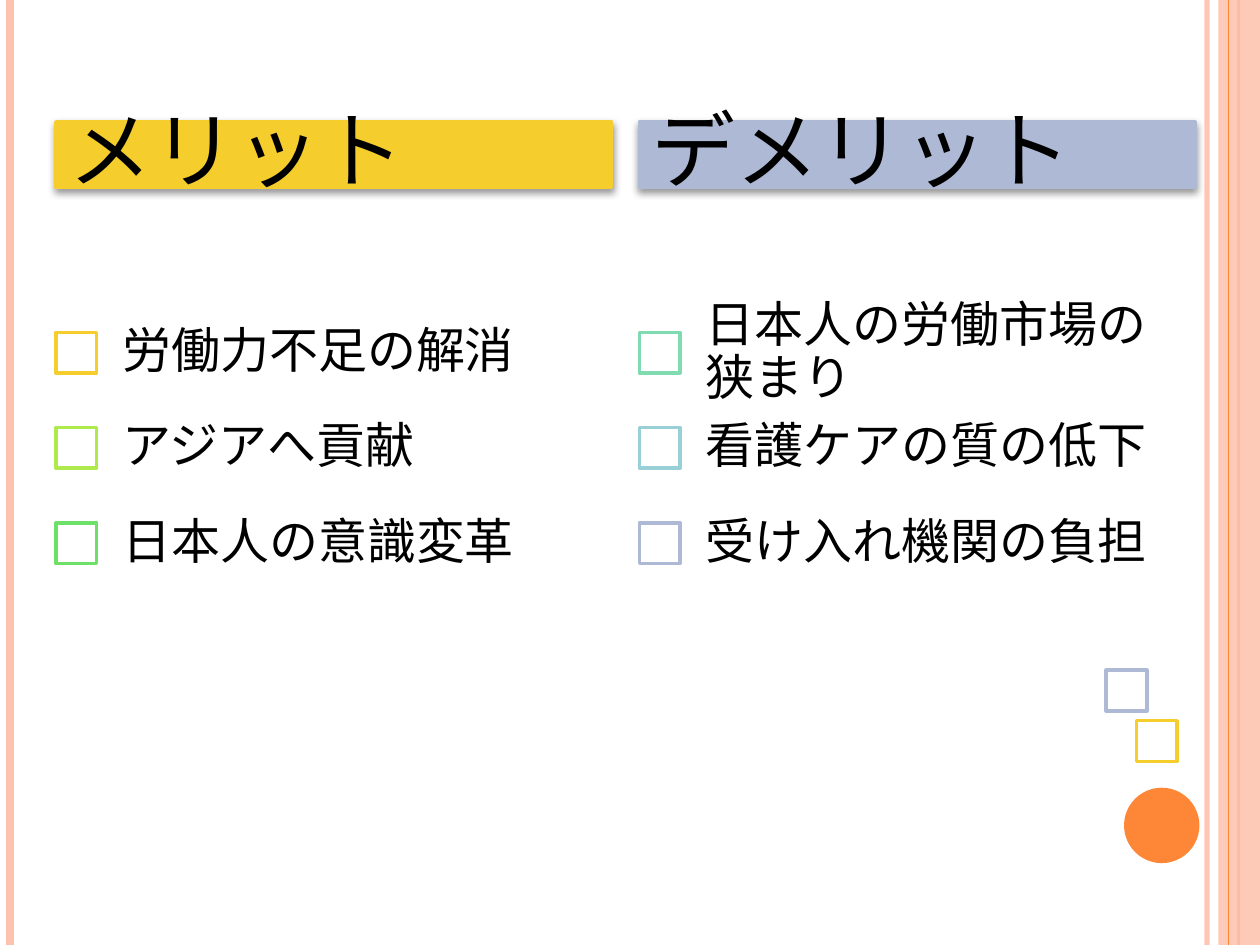
from lxml.etree import SubElement
from pptx import Presentation
from pptx.dml.color import RGBColor
from pptx.enum.shapes import MSO_CONNECTOR, MSO_SHAPE
from pptx.enum.text import MSO_ANCHOR, PP_ALIGN
from pptx.oxml import parse_xml
from pptx.oxml.ns import nsdecls, qn
from pptx.util import Cm, Pt

# Content
COLORS = {
    "white": "FFFFFF", "black": "000000", "orange": "FE8637", "peach": "FEC3AE",
    "yellow": "F5CD2D", "lime": "AEEA4B", "green": "6DE167",
    "mint": "81DBB1", "aqua": "99D0D7", "lavender": "AEBAD5",
}
COLUMNS = [
    {"title": "メリット", "color": "yellow",
     "items": [("労働力不足の解消", "yellow"), ("アジアへ貢献", "lime"),
               ("日本人の意識変革", "green")]},
    {"title": "デメリット", "color": "lavender",
     "items": [("日本人の労働市場の狭まり", "mint"), ("看護ケアの質の低下", "aqua"),
               ("受け入れ機関の負担", "lavender")]},
]
LOOSE_SQUARES = [(22.91, 14.53, "yellow"), (22.3, 13.51, "lavender")]
# Vertical rules: x in cm, colour, width in points, opacity in percent
RULES_BELOW = [(24.33, "peach", 3, 93), (0.2, "peach", 4.5, 100),
               (24.97, "orange", 1.5, 100)]
RULES_ABOVE = [(24.77, "orange", 0.75, 100)]

# Layout in cm
WIDTH, HEIGHT = 25.4, 19.05
LEFT, COLUMN_STEP, COLUMN_WIDTH = 1.13, 11.76, 11.2
BAR_TOP, BAR_HEIGHT = 2.46, 1.32
TITLE_TOP, TITLE_HEIGHT = 1.93, 2.36
ITEM_TOP, ITEM_STEP, ITEM_INDENT = 6.15, 1.92, 0.78
SQUARE, SQUARE_DROP = 0.82, 0.55
FONT = "TeX Gyre Schola"


def rgb(name):
    return RGBColor.from_string(COLORS[name])


def set_opacity(color_parent, percent):
    if percent < 100:
        color = next(color_parent.iter(qn("a:srgbClr")))
        SubElement(color, qn("a:alpha"), val=str(percent * 1000))


def add_rule(page, x, color, width, opacity):
    rule = page.shapes.add_connector(
        MSO_CONNECTOR.STRAIGHT, Cm(x), Cm(0), Cm(x), Cm(HEIGHT))
    rule.line.color.rgb = rgb(color)
    rule.line.width = Pt(width)
    properties = rule._element.spPr
    set_opacity(properties, opacity)
    SubElement(properties, qn("a:effectLst"))


def add_figure(page, kind, left, top, width, height, fill, line=None, opacity=100):
    figure = page.shapes.add_shape(kind, Cm(left), Cm(top), Cm(width), Cm(height))
    figure.shadow.inherit = False
    figure.fill.solid()
    figure.fill.fore_color.rgb = rgb(fill)
    set_opacity(figure._element.spPr, opacity)
    if line:
        figure.line.color.rgb = rgb(line)
        figure.line.width = Pt(2)
    else:
        figure.line.fill.background()
    return figure


def add_square(page, left, top, color, opacity=100):
    add_figure(page, MSO_SHAPE.RECTANGLE, left, top, SQUARE, SQUARE,
               "white", color, opacity)


def add_bar_shadow(bar):
    effects = bar._element.spPr.find(qn("a:effectLst"))
    effects.append(parse_xml(
        f'<a:outerShdw {nsdecls("a")} blurRad="{Pt(4)}" dist="{Pt(2)}" dir="5400000" '
        f'rotWithShape="0"><a:srgbClr val="{COLORS["black"]}"><a:alpha val="40000"/>'
        '</a:srgbClr></a:outerShdw>'))


def add_text(page, text, left, top, width, height, size, inset_x, inset_y):
    box = page.shapes.add_textbox(Cm(left), Cm(top), Cm(width), Cm(height))
    frame = box.text_frame
    frame.word_wrap = True
    frame.vertical_anchor = MSO_ANCHOR.MIDDLE
    frame.margin_left = frame.margin_right = Cm(inset_x)
    frame.margin_top = frame.margin_bottom = Cm(inset_y)
    para = frame.paragraphs[0]
    para.text = text
    para.alignment = PP_ALIGN.LEFT
    para.line_spacing = 0.9
    para.font.name = FONT
    para.font.size = Pt(size)
    para.font.color.rgb = rgb("black")


def add_column(page, left, column):
    # Heading bar
    bar = add_figure(page, MSO_SHAPE.RECTANGLE, left, BAR_TOP, COLUMN_WIDTH,
                     BAR_HEIGHT, column["color"], column["color"])
    add_bar_shadow(bar)
    add_text(page, column["title"], left, TITLE_TOP, COLUMN_WIDTH, TITLE_HEIGHT,
             48, 0.25, 0.18)
    # Checklist
    for row, (text, color) in enumerate(column["items"]):
        top = ITEM_TOP + row * ITEM_STEP
        add_square(page, left, top + SQUARE_DROP, color)
        add_text(page, text, left + ITEM_INDENT, top, COLUMN_WIDTH - ITEM_INDENT,
                 ITEM_STEP, 28, 0.56, 0.56)


def main():
    deck = Presentation()
    deck.slide_width, deck.slide_height = Cm(WIDTH), Cm(HEIGHT)
    page = deck.slides.add_slide(deck.slide_layouts[6])

    # Side decoration
    for rule in RULES_BELOW:
        add_rule(page, *rule)
    add_figure(page, MSO_SHAPE.RECTANGLE, 24.56, 0, WIDTH - 24.56, HEIGHT,
               "peach", opacity=87)
    for rule in RULES_ABOVE:
        add_rule(page, *rule)
    add_figure(page, MSO_SHAPE.OVAL, 22.66, 15.88, 1.52, 1.52, "orange")

    # Two columns and the loose squares
    for index, column in enumerate(COLUMNS):
        add_column(page, LEFT + index * COLUMN_STEP, column)
    for left, top, color in LOOSE_SQUARES:
        add_square(page, left, top, color, opacity=90)

    deck.save("out.pptx")


if __name__ == "__main__":
    main()
